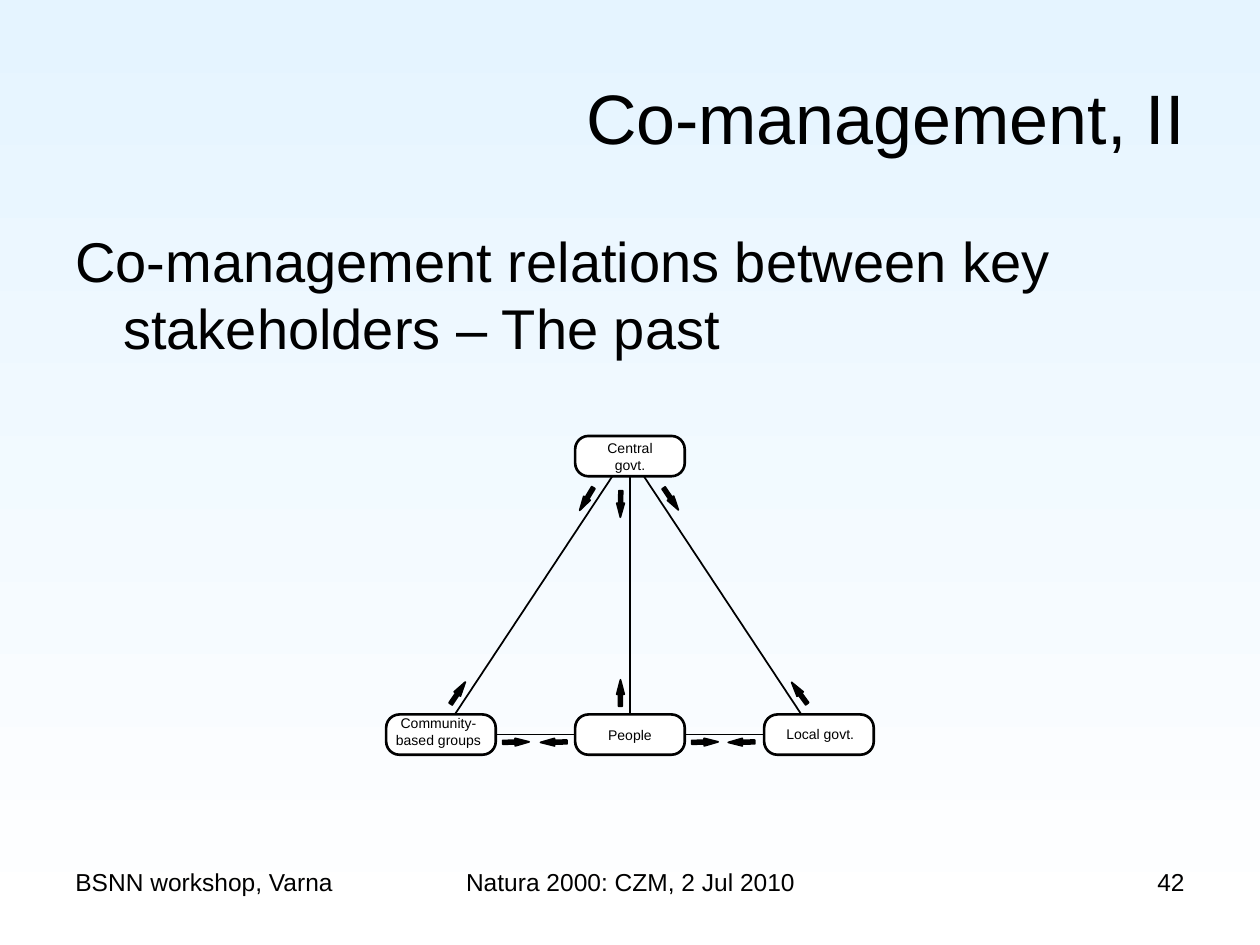
from dataclasses import dataclass

from lxml import etree
from pptx import Presentation
from pptx.dml.color import RGBColor
from pptx.enum.shapes import MSO_CONNECTOR, MSO_SHAPE
from pptx.enum.text import MSO_ANCHOR, PP_ALIGN
from pptx.oxml.ns import qn
from pptx.util import Inches, Pt

LEFT, CENTER, RIGHT = PP_ALIGN.LEFT, PP_ALIGN.CENTER, PP_ALIGN.RIGHT
TOP, MIDDLE = MSO_ANCHOR.TOP, MSO_ANCHOR.MIDDLE
ROUNDED, ARROW = MSO_SHAPE.ROUNDED_RECTANGLE, MSO_SHAPE.RIGHT_ARROW
STRAIGHT = MSO_CONNECTOR.STRAIGHT
TOP_SIDE, LEFT_SIDE, BOTTOM_SIDE, RIGHT_SIDE = range(4)

GRID_COLUMNS, GRID_ROWS = 20, 15
CELL = Inches(0.5)
BOX_WIDTH, BOX_HEIGHT = 1.74, 0.64
ARROW_WIDTH, ARROW_HEIGHT = 0.42, 0.12
UPPER_ROW, LOWER_ROW = 7.24, 11.66


@dataclass(frozen=True)
class Theme:
    font: str = "Arial"
    ink: RGBColor = RGBColor(0, 0, 0)
    paper: RGBColor = RGBColor(255, 255, 255)
    sky: RGBColor = RGBColor(0xE5, 0xF4, 0xFF)
    title: int = 40
    body: int = 32
    footer: int = 14
    label: int = 8
    box_line: float = 1.5
    thin_line: float = 1


THEME = Theme()

STAKEHOLDERS = {
    "central": ("Central govt.", 10, UPPER_ROW, (10, 7.25, 1.64, 0.74)),
    "community": ("Community-based groups", 7, LOWER_ROW, (6.96, 11.61, 2.04, 0.74)),
    "people": ("People", 10, LOWER_ROW, (10, 11.67, 1.76, 0.46)),
    "local": ("Local govt.", 13, LOWER_ROW, (13.02, 11.65, 1.96, 0.46)),
}

SIDE_RELATIONS = [
    ("community", RIGHT_SIDE, "people", LEFT_SIDE),
    ("people", RIGHT_SIDE, "local", LEFT_SIDE),
    ("central", BOTTOM_SIDE, "people", TOP_SIDE),
]

DIAGONAL_RELATIONS = [
    (10.22, 7.56, 12.72, 11.34),
    (9.72, 7.56, 7.22, 11.34),
]

HORIZONTAL_FLOWS = [
    (column, 11.78, angle, 1.85)
    for column, angle in [(8.19, 359), (8.79, 179), (11.19, 359), (11.77, 179)]
]
DOWNWARD_FLOWS = [
    (9.31, 7.92, 121, 1.85),
    (9.85, 8, 91, 1.85),
    (10.65, 7.92, 56, 1.85),
]
UPWARD_FLOWS = [
    (column, 11, angle, 1.91)
    for column, angle in [(7.27, 304), (9.85, 270), (12.69, 234)]
]


def cells(*counts):
    return [round(count * CELL) for count in counts]


def centered(column, row, width, height):
    return cells(column - width / 2, row - height / 2, width, height)


def paint_background(slide):
    fill = slide.background.fill
    fill.gradient()
    fill.gradient_angle = 270
    for stop, color in zip(fill.gradient_stops, (THEME.sky, THEME.paper)):
        stop.color.rgb = color


def add_text(slide, frame, text, size, alignment=LEFT, anchor=TOP):
    shape = slide.shapes.add_textbox(*frame)
    text_frame = shape.text_frame
    text_frame.word_wrap = True
    text_frame.vertical_anchor = anchor
    text_frame.text = text
    paragraph = text_frame.paragraphs[0]
    paragraph.alignment = alignment
    font = paragraph.runs[0].font
    font.name, font.size = THEME.font, Pt(size)
    font.color.rgb = THEME.ink
    return paragraph


def add_filled_shape(slide, kind, frame, fill, line_width, adjustments):
    shape = slide.shapes.add_shape(kind, *frame)
    shape.shadow.inherit = False
    shape.fill.solid()
    shape.fill.fore_color.rgb = fill
    shape.line.color.rgb = THEME.ink
    shape.line.width = Pt(line_width)
    for index, value in enumerate(adjustments):
        shape.adjustments[index] = value
    return shape


def add_box(slide, column, row):
    frame = centered(column, row, BOX_WIDTH, BOX_HEIGHT)
    return add_filled_shape(slide, ROUNDED, frame, THEME.paper, THEME.box_line, [0.33])


def add_flow(slide, column, row, angle, head):
    frame = centered(column, row, ARROW_WIDTH, ARROW_HEIGHT)
    arrow = add_filled_shape(slide, ARROW, frame, THEME.ink, THEME.thin_line, [0.5, head])
    arrow.rotation = angle


def add_line(slide, ends=(0, 0, 0, 0)):
    connector = slide.shapes.add_connector(STRAIGHT, *cells(*ends))
    connector.line.color.rgb = THEME.ink
    connector.line.width = Pt(THEME.thin_line)
    etree.SubElement(connector._element.spPr, qn("a:effectLst"))
    return connector


def add_heading(slide):
    add_text(slide, cells(1, 0.6, 18, 2.5), "Co-management, II", THEME.title, RIGHT, MIDDLE)
    paragraph = add_text(
        slide,
        cells(1, 3.5, 18, 9.9),
        "Co-management relations between key stakeholders – The past",
        THEME.body,
    )
    paragraph.space_before = Pt(0.2 * THEME.body)
    properties = paragraph._p.get_or_add_pPr()
    properties.set("marL", str(Inches(0.38)))
    properties.set("indent", str(-Inches(0.38)))


def add_footer(slide):
    for text, column, width, alignment in [
        ("BSNN workshop, Varna", 1, 4.66, LEFT),
        ("Natura 2000: CZM, 2 Jul 2010", 6.84, 6.34, CENTER),
        ("42", 14.34, 4.66, RIGHT),
    ]:
        add_text(slide, cells(column, 13.66, width, 1.04), text, THEME.footer, alignment)


def add_diagram(slide):
    boxes = {
        name: add_box(slide, column, row)
        for name, (_, column, row, _) in STAKEHOLDERS.items()
    }
    for text, _, _, label in STAKEHOLDERS.values():
        add_text(slide, centered(*label), text, THEME.label, CENTER)
    for start, start_side, end, end_side in SIDE_RELATIONS:
        connector = add_line(slide)
        connector.begin_connect(boxes[start], start_side)
        connector.end_connect(boxes[end], end_side)
    for ends in DIAGONAL_RELATIONS:
        add_line(slide, ends)
    for flow in HORIZONTAL_FLOWS + DOWNWARD_FLOWS + UPWARD_FLOWS:
        add_flow(slide, *flow)


def main():
    presentation = Presentation()
    presentation.slide_width, presentation.slide_height = cells(GRID_COLUMNS, GRID_ROWS)
    slide = presentation.slides.add_slide(presentation.slide_layouts[6])
    paint_background(slide)
    add_heading(slide)
    add_diagram(slide)
    add_footer(slide)
    presentation.save("out.pptx")


if __name__ == "__main__":
    main()
